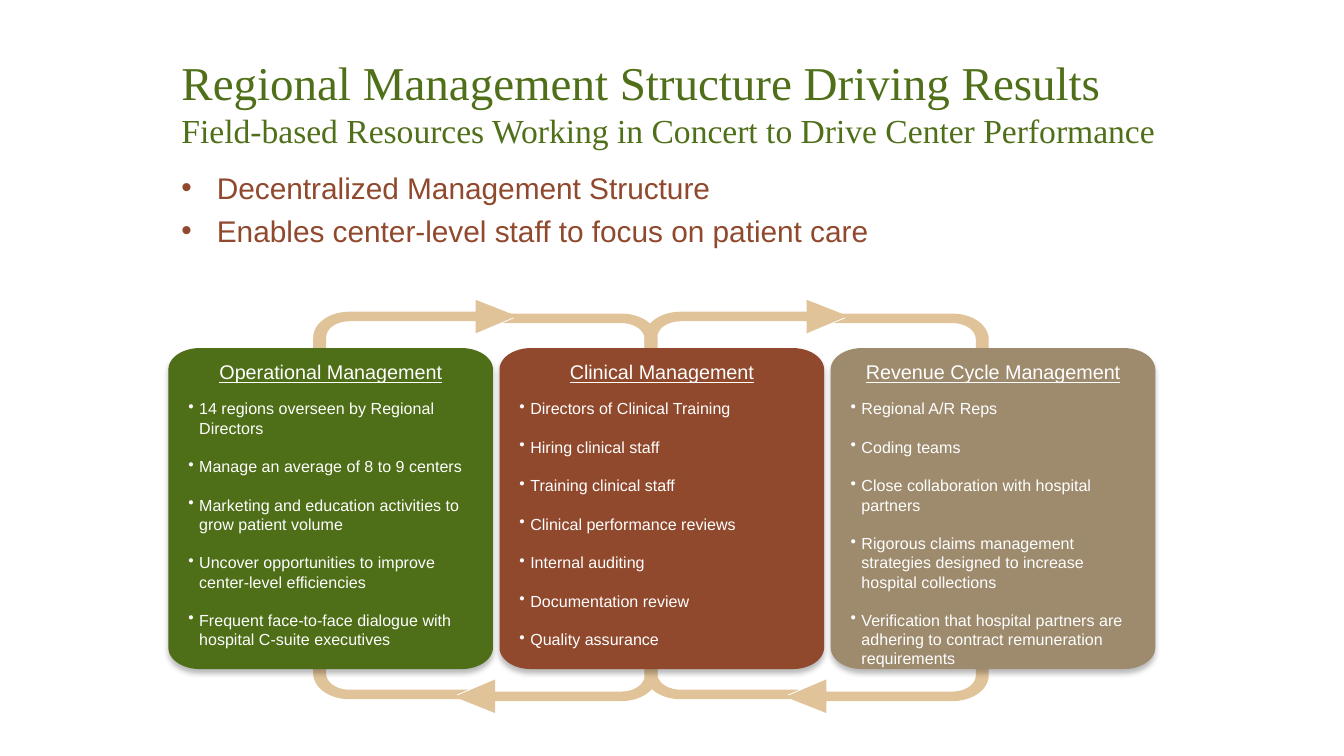
from math import cos, radians, sin

from lxml.etree import SubElement
from pptx import Presentation
from pptx.dml.color import RGBColor
from pptx.enum.text import MSO_ANCHOR, MSO_AUTO_SIZE, PP_ALIGN
from pptx.oxml.ns import qn
from pptx.util import Pt

TITLE = "Regional Management Structure Driving Results"
SUBTITLE = "Field-based Resources Working in Concert to Drive Center Performance"
POINTS = [
    "Decentralized Management Structure",
    "Enables center-level staff to focus on patient care",
]
CARDS = [
    ("Operational Management", "4E6E17", [
        "14 regions overseen by Regional Directors",
        "Manage an average of 8 to 9 centers",
        "Marketing and education activities to grow patient volume",
        "Uncover opportunities to improve center-level efficiencies",
        "Frequent face-to-face dialogue with hospital C-suite executives",
    ]),
    ("Clinical Management", "90492D", [
        "Directors of Clinical Training",
        "Hiring clinical staff",
        "Training clinical staff",
        "Clinical performance reviews",
        "Internal auditing",
        "Documentation review",
        "Quality assurance",
    ]),
    ("Revenue Cycle Management", "9E8B6D", [
        "Regional A/R Reps",
        "Coding teams",
        "Close collaboration with hospital partners",
        "Rigorous claims management strategies designed to increase "
        "hospital collections",
        "Verification that hospital partners are adhering to contract "
        "remuneration requirements",
    ]),
]
GREEN, BROWN, SAND, WHITE = "4F6F19", "90492D", "E0C398", "FFFFFF"

CARD_LEFT, CARD_TOP, CARD_WIDTH, CARD_HEIGHT = 90.2, 186.5, 173.9, 172
CARD_PITCH = 177.4
CARD_RX, CARD_RY = 17, 11.5
LOOP_LEFT, LOOP_RIGHT = 167.8, 352.3
LOOP_TOP, LOOP_BOTTOM = 160.6, 382


def rgb(code):
    return RGBColor.from_string(code)


def style(font, size, color, name="Arial"):
    font.size, font.name = Pt(size), name
    font.color.rgb = rgb(color)


def add_bullet(paragraph, margin, hang):
    properties = paragraph._p.get_or_add_pPr()
    properties.set("marL", str(Pt(margin)))
    properties.set("indent", str(-Pt(hang)))
    SubElement(properties, qn("a:buChar")).set("char", "•")


def corner(cx, cy, rx, ry, start, sweep=90):
    """Points along a quarter ellipse; angles run clockwise from the right."""
    angles = [radians(start + sweep * step / 12) for step in range(13)]
    return [(cx + rx * cos(a), cy + ry * sin(a)) for a in angles]


def add_outline(points, color):
    corners = [(Pt(x), Pt(y)) for x, y in points]
    builder = slide.shapes.build_freeform(*corners[0])
    builder.add_line_segments(corners[1:], close=True)
    shape = builder.convert_to_shape()
    shape.shadow.inherit = False
    shape.fill.solid()
    shape.fill.fore_color.rgb = rgb(color)
    shape.line.fill.background()
    return shape


def add_shadow(shape):
    effects = shape._element.spPr.find(qn("a:effectLst"))
    shadow = SubElement(effects, qn("a:outerShdw"), blurRad=str(Pt(3)),
                        dist=str(Pt(2)), dir="5400000", rotWithShape="0")
    black = SubElement(shadow, qn("a:srgbClr"), val="000000")
    SubElement(black, qn("a:alpha"), val="27000")


def add_card(left, heading, color, items):
    right, bottom = left + CARD_WIDTH, CARD_TOP + CARD_HEIGHT
    x1, x2 = left + CARD_RX, right - CARD_RX
    y1, y2 = CARD_TOP + CARD_RY, bottom - CARD_RY
    centers = [(x1, y1, 180), (x2, y1, 270), (x2, y2, 0), (x1, y2, 90)]
    outline = [point for x, y, start in centers
               for point in corner(x, y, CARD_RX, CARD_RY, start)]
    add_shadow(add_outline(outline, color))

    box = slide.shapes.add_textbox(Pt(left), Pt(189.4), Pt(CARD_WIDTH), Pt(169))
    frame = box.text_frame
    frame.word_wrap = True
    title = frame.paragraphs[0]
    title.text, title.alignment = heading, PP_ALIGN.CENTER
    style(title.font, 10.6, WHITE)
    title.font.underline = True
    for index, item in enumerate(items):
        paragraph = frame.add_paragraph()
        paragraph.text = item
        paragraph.space_before = Pt(10.3 if index else 8)
        add_bullet(paragraph, 9.4, 5.8)
        style(paragraph.font, 8.6, WHITE)


# Half loop with an arrowhead, measured from its outer side and head edge
HALF_LOOP = [
    (109, 8.7), (87, 18), (87, 11.5),
    *corner(19.3, 20.2, 12.4, 8.7, 270, -90),
    *corner(19.3, 200.2, 12.4, 8.7, 180, -90),
    (83, 208.9), (76.5, 211.7), (82.3, 214),
    *corner(19.3, 200.2, 19.3, 13.8, 90),
    *corner(19.3, 20.2, 19.3, 13.8, 180),
    (87, 6.4), (87, 0),
]

presentation = Presentation()
presentation.slide_width, presentation.slide_height = Pt(720), Pt(405)
slide = presentation.slides.add_slide(presentation.slide_layouts[1])

title, body = slide.placeholders
for placeholder, top, height, anchor in [
    (title, 28.8, 54.7, MSO_ANCHOR.BOTTOM),
    (body, 87.8, 90, MSO_ANCHOR.TOP),
]:
    placeholder.left, placeholder.top = Pt(90.7), Pt(top)
    placeholder.width, placeholder.height = Pt(579), Pt(height)
    frame = placeholder.text_frame
    frame.auto_size, frame.vertical_anchor = MSO_AUTO_SIZE.NONE, anchor
    frame.margin_left = frame.margin_right = Pt(6.5)
    frame.margin_top = frame.margin_bottom = Pt(3.2)

heading = title.text_frame.paragraphs[0]
heading.alignment = PP_ALIGN.LEFT
for text, size in [(TITLE, 25.2), (SUBTITLE, 18)]:
    if heading.runs:
        heading.add_line_break()
    run = heading.add_run()
    run.text = text
    style(run.font, size, GREEN, "Times New Roman")

body.text_frame.text = "\n".join(POINTS)
for index, paragraph in enumerate(body.text_frame.paragraphs):
    paragraph.space_before = Pt(3.7 if index else 0)
    add_bullet(paragraph, 19, 19)
    style(paragraph.font, 16, BROWN)

for index in range(len(CARDS) - 1):
    shift = index * CARD_PITCH
    add_outline([(LOOP_LEFT + shift + x, LOOP_TOP + y) for x, y in HALF_LOOP], SAND)
    add_outline([(LOOP_RIGHT + shift - x, LOOP_BOTTOM - y) for x, y in HALF_LOOP], SAND)

for index, card in enumerate(CARDS):
    add_card(CARD_LEFT + index * CARD_PITCH, *card)

presentation.save("out.pptx")
